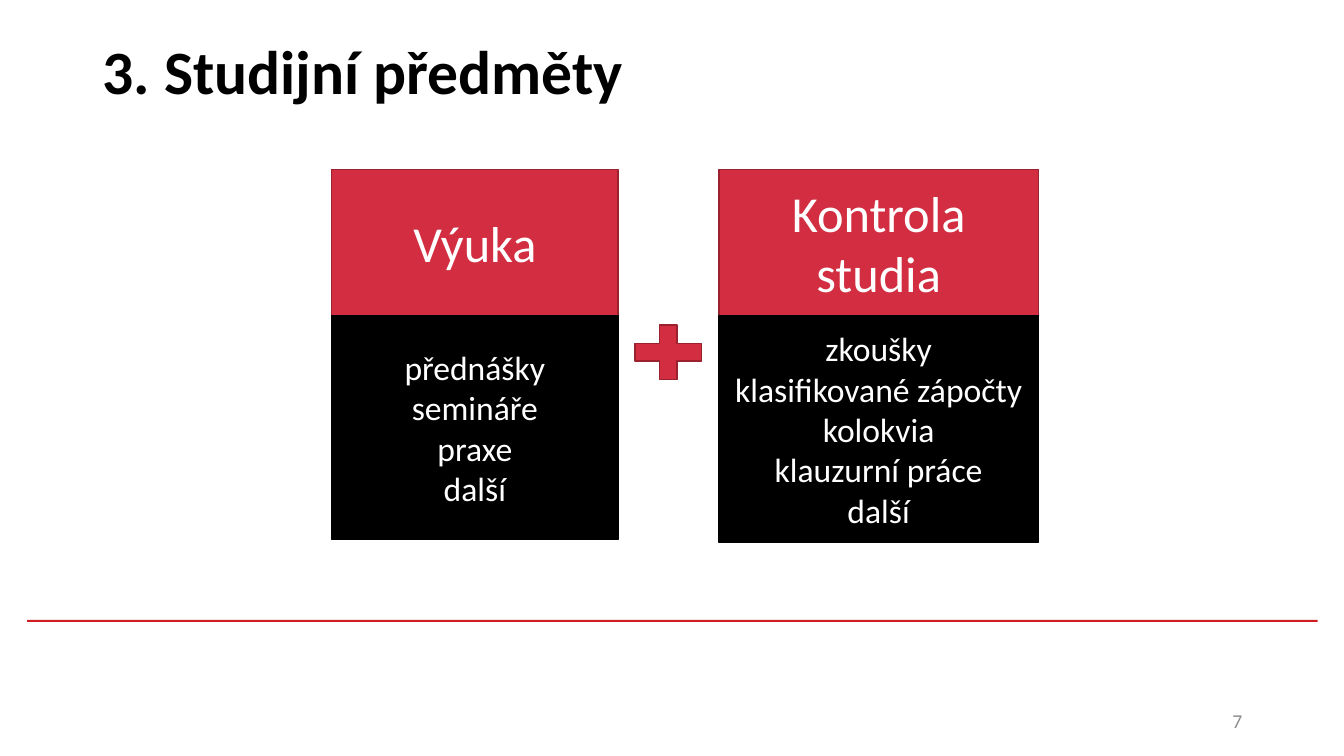
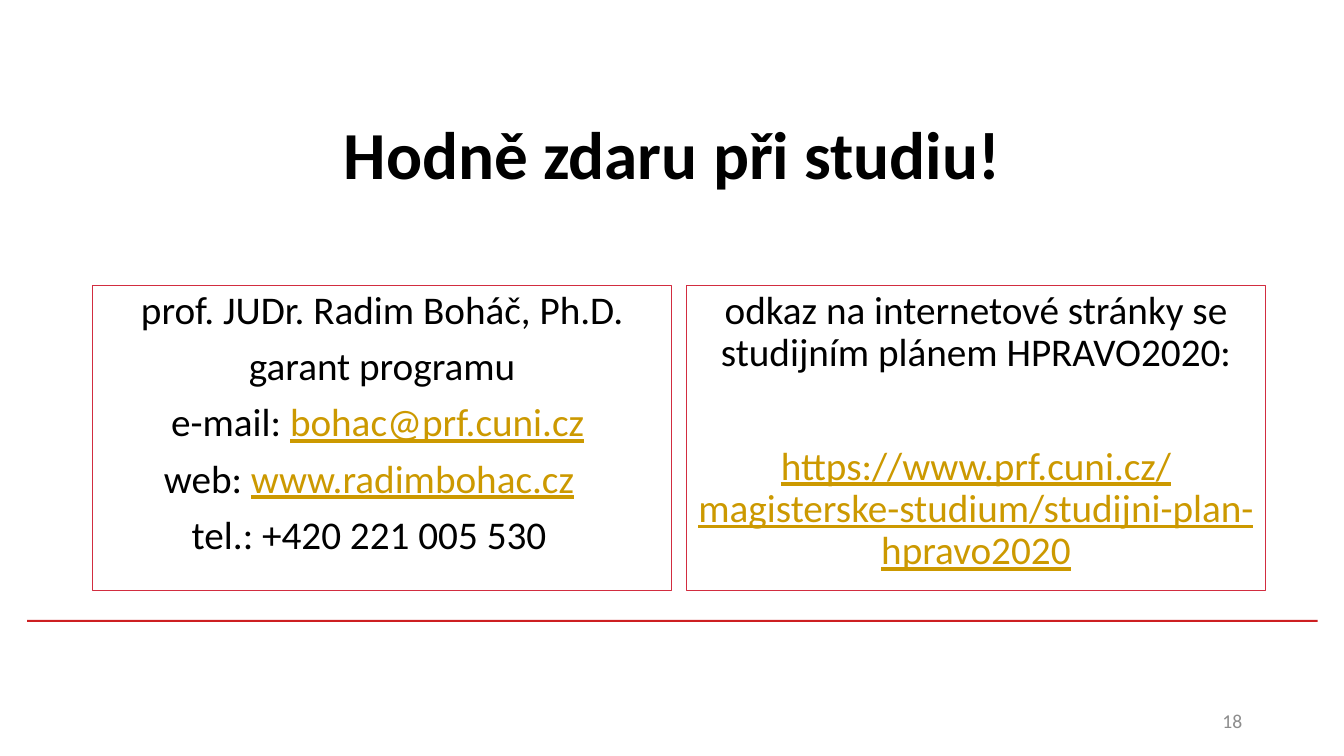
from dataclasses import dataclass

from pptx import Presentation
from pptx.dml.color import RGBColor
from pptx.enum.shapes import MSO_SHAPE
from pptx.enum.text import MSO_ANCHOR, PP_ALIGN
from pptx.util import Inches, Pt

# Content: a paragraph is a list of (text, is_link) runs plus its format
COURSES = {
    "title": "3. Studijní předměty",
    "number": "7",
    "cards": [
        {"head": "Výuka", "left": 3.29, "width": 2.84, "body_height": 2.22,
         "items": ["přednášky", "semináře", "praxe", "další"]},
        {"head": "Kontrola studia", "left": 7.13, "width": 3.17, "body_height": 2.25,
         "items": ["zkoušky", "klasifikované zápočty", "kolokvia",
                   "klauzurní práce", "další"]},
    ],
}
CLOSING = {
    "title": "Hodně zdaru při studiu!",
    "number": "18",
    "panels": [
        [
            {"runs": [("prof. JUDr. Radim Boháč, Ph.D.", False)]},
            {"runs": [("garant programu", False)]},
            {"runs": [("e-mail: ", False), ("bohac@prf.cuni.cz", True), (" ", False)]},
            {"runs": [("web: ", False), ("www.radimbohac.cz", True)],
             "right_indent": 0.26},
            {"runs": [("tel.: +420 221 005 530", False)]},
        ],
        [
            {"runs": [("odkaz na internetové stránky se studijním plánem "
                       "HPRAVO2020:", False)]},
            {"runs": [("https://www.prf.cuni.cz/magisterske-studium/"
                       "studijni-plan-hpravo2020", True)], "before": 51},
        ],
    ],
}


@dataclass(frozen=True)
class Theme:
    font: str = "Calibri"
    red: str = "D22D40"
    dark_red: str = "9B212F"
    rule: str = "CD1F21"
    black: str = "000000"
    white: str = "FFFFFF"
    grey: str = "8C8C8C"
    link: str = "CC9900"
    closing_size: int = 48
    title_size: int = 44
    head_size: int = 36
    panel_size: int = 28
    item_size: int = 24
    number_size: int = 14


THEME = Theme()
WIDTH, HEIGHT = 13.33, 7.5
MARGIN, TITLE_WIDTH, TITLE_HEIGHT = 0.92, 11.5, 1.45
CARD_TOP, HEAD_HEIGHT = 1.68, 1.45
PANEL_TOP, PANEL_WIDTH, PANEL_HEIGHT, PANEL_GAP = 2.83, 5.74, 3.03, 0.15
PLUS_WIDTH, PLUS_HEIGHT = 0.9, 0.73


def write(shape, paragraphs, size, color=THEME.black, bold=False,
          align=PP_ALIGN.CENTER, anchor=MSO_ANCHOR.MIDDLE, spacing=None, before=0):
    """Fill a shape with paragraphs given as strings or as dicts of runs."""
    frame = shape.text_frame
    frame.word_wrap = True
    frame.vertical_anchor = anchor
    for index, content in enumerate(paragraphs):
        if isinstance(content, str):
            content = {"runs": [(content, False)]}
        paragraph = frame.add_paragraph() if index else frame.paragraphs[0]
        paragraph.alignment = align
        if spacing:
            paragraph.line_spacing = spacing
        if index:
            paragraph.space_before = Pt(content.get("before", before))
        if "right_indent" in content:
            properties = paragraph._p.get_or_add_pPr()
            properties.set("marR", str(Inches(content["right_indent"])))
        for text, is_link in content["runs"]:
            run = paragraph.add_run()
            run.text = text
            run.font.name = THEME.font
            run.font.size = Pt(size)
            run.font.bold = bold
            run.font.underline = is_link
            run.font.color.rgb = RGBColor.from_string(THEME.link if is_link else color)


def add_block(slide, box, fill, line=None, kind=MSO_SHAPE.RECTANGLE):
    block = slide.shapes.add_shape(kind, *map(Inches, box))
    block.shadow.inherit = False
    block.fill.solid()
    block.fill.fore_color.rgb = RGBColor.from_string(fill)
    if line:
        block.line.color.rgb = RGBColor.from_string(line)
        block.line.width = Pt(1)
    else:
        block.line.fill.background()
    return block


def add_text(slide, box, text, **style):
    write(slide.shapes.add_textbox(*map(Inches, box)), [text], **style)


def add_base(deck, content, title_top, title_size, title_align):
    """Add a slide with the shared rule, title and page number."""
    slide = deck.slides.add_slide(deck.slide_layouts[6])
    add_block(slide, (0.27, 6.15, 12.8, 0.02), THEME.rule)
    add_text(slide, (MARGIN, title_top, TITLE_WIDTH, TITLE_HEIGHT), content["title"],
             size=title_size, bold=True, align=title_align, spacing=0.9)
    add_text(slide, (9.42, 6.95, 3, 0.4), content["number"],
             size=THEME.number_size, color=THEME.grey, align=PP_ALIGN.RIGHT)
    return slide


def build_courses(deck):
    slide = add_base(deck, COURSES, 0.01, THEME.title_size, PP_ALIGN.LEFT)
    body_top = CARD_TOP + HEAD_HEIGHT
    # Cards: red head over black list
    for card in COURSES["cards"]:
        left, width = card["left"], card["width"]
        head = add_block(slide, (left, CARD_TOP, width, HEAD_HEIGHT),
                         THEME.red, THEME.dark_red)
        write(head, [card["head"]], THEME.head_size, THEME.white)
        body = add_block(slide, (left, body_top, width, card["body_height"]),
                         THEME.black, THEME.black)
        write(body, card["items"], THEME.item_size, THEME.white)
    # Plus sign centred in the gap between the cards
    first, second = COURSES["cards"]
    gap_middle = (first["left"] + first["width"] + second["left"]) / 2
    add_block(slide, (gap_middle - PLUS_WIDTH / 2, body_top, PLUS_WIDTH, PLUS_HEIGHT),
              THEME.red, THEME.dark_red, MSO_SHAPE.MATH_PLUS)


def build_closing(deck):
    slide = add_base(deck, CLOSING, 0.84, THEME.closing_size, PP_ALIGN.CENTER)
    # Contact and link panels
    for column, paragraphs in enumerate(CLOSING["panels"]):
        left = MARGIN + column * (PANEL_WIDTH + PANEL_GAP)
        panel = add_block(slide, (left, PANEL_TOP, PANEL_WIDTH, PANEL_HEIGHT),
                          THEME.white, THEME.red)
        write(panel, paragraphs, THEME.panel_size, anchor=MSO_ANCHOR.TOP,
              spacing=0.9, before=10)


def main():
    deck = Presentation()
    deck.slide_width, deck.slide_height = Inches(WIDTH), Inches(HEIGHT)
    build_courses(deck)
    build_closing(deck)
    deck.save("out.pptx")


if __name__ == "__main__":
    main()
